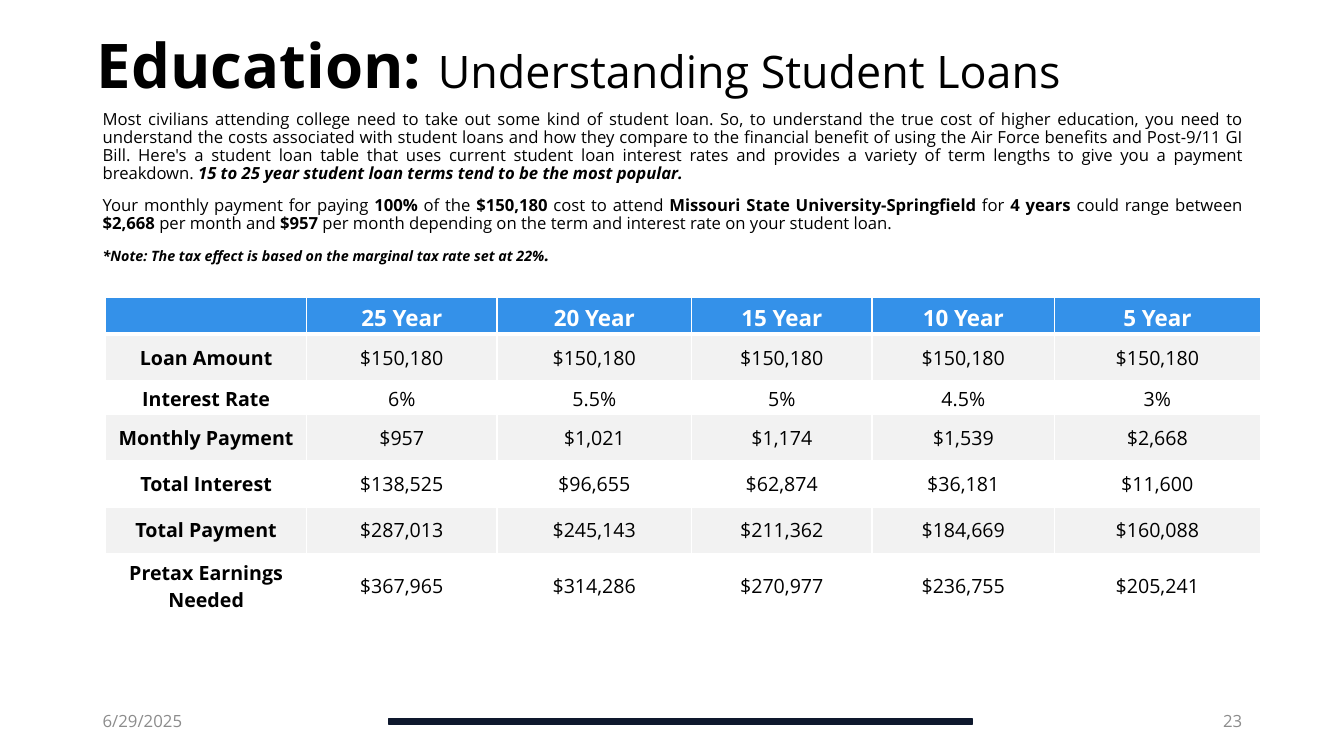
from dataclasses import dataclass

from lxml import etree
from pptx import Presentation
from pptx import util as u
from pptx.dml.color import RGBColor
from pptx.enum import shapes, text
from pptx.oxml.ns import qn

# Content: each run is (words, style), where style holds b for bold, i for italic
TITLE = [("Education: ", "b"), ("Understanding Student Loans", "")]
INTRO = [
    ("Most civilians attending college need to take out some kind of student loan. "
     "So, to understand the true cost of higher education, you need to understand "
     "the costs associated with student loans and how they compare to the financial "
     "benefit of using the Air Force benefits and Post-9/11 GI Bill. Here's a student "
     "loan table that uses current student loan interest rates and provides a variety "
     "of term lengths to give you a payment breakdown. ", ""),
    ("15 to 25 year student loan terms tend to be the most popular.", "bi"),
]
RANGE = [
    ("Your monthly payment for paying ", ""), ("100%", "b"), (" of the ", ""),
    ("$150,180", "b"), (" cost to attend ", ""),
    ("Missouri State University-Springfield", "b"), (" for ", ""),
    ("4 years", "b"), (" could range between ", ""), ("$2,668", "b"),
    (" per month and ", ""), ("$957", "b"),
    (" per month depending on the term and interest rate on your student loan.", ""),
]
NOTE = [("*Note: The tax effect is based on the marginal tax rate set at 22%", "bi"),
        (".", "bi")]
LOANS = [
    ("", "25 Year", "20 Year", "15 Year", "10 Year", "5 Year"),
    ("Loan Amount",) + ("$150,180",) * 5,
    ("Interest Rate", "6%", "5.5%", "5%", "4.5%", "3%"),
    ("Monthly Payment", "$957", "$1,021", "$1,174", "$1,539", "$2,668"),
    ("Total Interest", "$138,525", "$96,655", "$62,874", "$36,181", "$11,600"),
    ("Total Payment", "$287,013", "$245,143", "$211,362", "$184,669", "$160,088"),
    ("Pretax Earnings Needed", "$367,965", "$314,286", "$270,977", "$236,755",
     "$205,241"),
]
COLS = (1.99, 1.89, 1.93, 1.79, 1.81, 2.04)
ROWS = (0.29, 0.46, 0.27, 0.46, 0.46, 0.46, 0.65)


@dataclass
class Theme:
    font: str = "Open Sans"
    ink: str = "000000"
    white: str = "FFFFFF"
    blue: str = "3491E9"
    band: str = "F2F2F2"
    navy: str = "0E182D"
    gray: str = "8C8C8C"
    title: float = 44
    sub: float = 32
    body: float = 11.9
    note: float = 10.2
    head: float = 16
    cell: float = 14
    foot: float = 12


T = Theme()
WIDE, HIGH = 13.33, 7.5
LEFT, SPAN = 0.92, 11.5
ALIGN, ANCHOR = text.PP_ALIGN, text.MSO_ANCHOR


def style(font, size, color=T.ink, bold=False):
    font.name, font.size, font.bold = T.font, u.Pt(size), bold
    font.color.rgb = RGBColor.from_string(color)


def paint(fill, color):
    fill.solid()
    fill.fore_color.rgb = RGBColor.from_string(color)


def write(para, runs, size, align):
    para.alignment, para.line_spacing = align, 0.9
    style(para.font, size)
    for words, look in runs:
        run = para.add_run()
        run.text = words
        run.font.bold, run.font.italic = "b" in look, "i" in look


def add_box(slide, left, top, width, height, anchor):
    frame = slide.shapes.add_textbox(*map(u.Inches, (left, top, width, height))).text_frame
    frame.word_wrap, frame.vertical_anchor = True, anchor
    return frame


def add_edges(cell, widths):
    props = cell._tc.get_or_add_tcPr()
    for spot, (side, width) in enumerate(widths.items()):
        line = etree.Element(qn("a:ln" + side), w=str(u.Pt(width)))
        fill = etree.SubElement(line, qn("a:solidFill"))
        etree.SubElement(fill, qn("a:srgbClr"), val=T.white)
        props.insert(spot, line)


def add_loans(slide):
    frame = slide.shapes.add_table(
        len(ROWS), len(COLS), u.Inches(1.05), u.Inches(2.95),
        u.Inches(sum(COLS)), u.Inches(sum(ROWS)))
    table = frame.table
    for col, width in zip(table.columns, COLS):
        col.width = u.Inches(width)
    for row, height in zip(table.rows, ROWS):
        row.height = u.Inches(height)
    for r, row in enumerate(LOANS):
        head = r == 0
        shade = T.blue if head else T.band if r % 2 else T.white
        for c, words in enumerate(row):
            cell = table.cell(r, c)
            cell.text, cell.vertical_anchor = words, ANCHOR.MIDDLE
            para = cell.text_frame.paragraphs[0]
            para.alignment = ALIGN.CENTER
            style(para.font, T.head if head else T.cell,
                  T.white if head else T.ink, head or c == 0)
            paint(cell.fill, shade)
            add_edges(cell, {"L": 1, "R": 1, "T": 3 if r == 1 else 1,
                             "B": 3 if head else 1})


def main():
    deck = Presentation()
    deck.slide_width, deck.slide_height = u.Inches(WIDE), u.Inches(HIGH)
    slide = deck.slides.add_slide(deck.slide_layouts[5])

    # Title
    title = slide.shapes.title
    title.left, title.top, title.width, title.height = map(
        u.Inches, (0.86, 0.04, 11.55, 1.27))
    title.text_frame.vertical_anchor = ANCHOR.MIDDLE
    para = title.text_frame.paragraphs[0]
    write(para, TITLE, T.title, ALIGN.LEFT)
    para.runs[1].font.size = u.Pt(T.sub)

    # Introduction
    frame = add_box(slide, LEFT, 1.05, SPAN, 1.82, ANCHOR.TOP)
    for n, runs in enumerate((INTRO, RANGE, NOTE)):
        para = frame.add_paragraph() if n else frame.paragraphs[0]
        para.space_before = u.Pt(10 if n else 0)
        write(para, runs, T.body, ALIGN.JUSTIFY)
    para.runs[0].font.size = u.Pt(T.note)

    # Loan table
    add_loans(slide)

    # Footer: bar, date and page number
    bar = slide.shapes.add_shape(
        shapes.MSO_SHAPE.RECTANGLE, *map(u.Inches, (3.86, 7.13, 5.78, 0.06)))
    bar.shadow.inherit = False
    paint(bar.fill, T.navy)
    paint(bar.line.fill, T.navy)
    bar.line.width = u.Pt(1)
    wide = 3
    for words, left, align in (("6/29/2025", LEFT, ALIGN.LEFT),
                               ("23", LEFT + SPAN - wide, ALIGN.RIGHT)):
        para = add_box(slide, left, 6.95, wide, 0.4, ANCHOR.MIDDLE).paragraphs[0]
        para.text, para.alignment = words, align
        style(para.font, T.foot, T.gray)

    deck.save("out.pptx")


if __name__ == "__main__":
    main()
